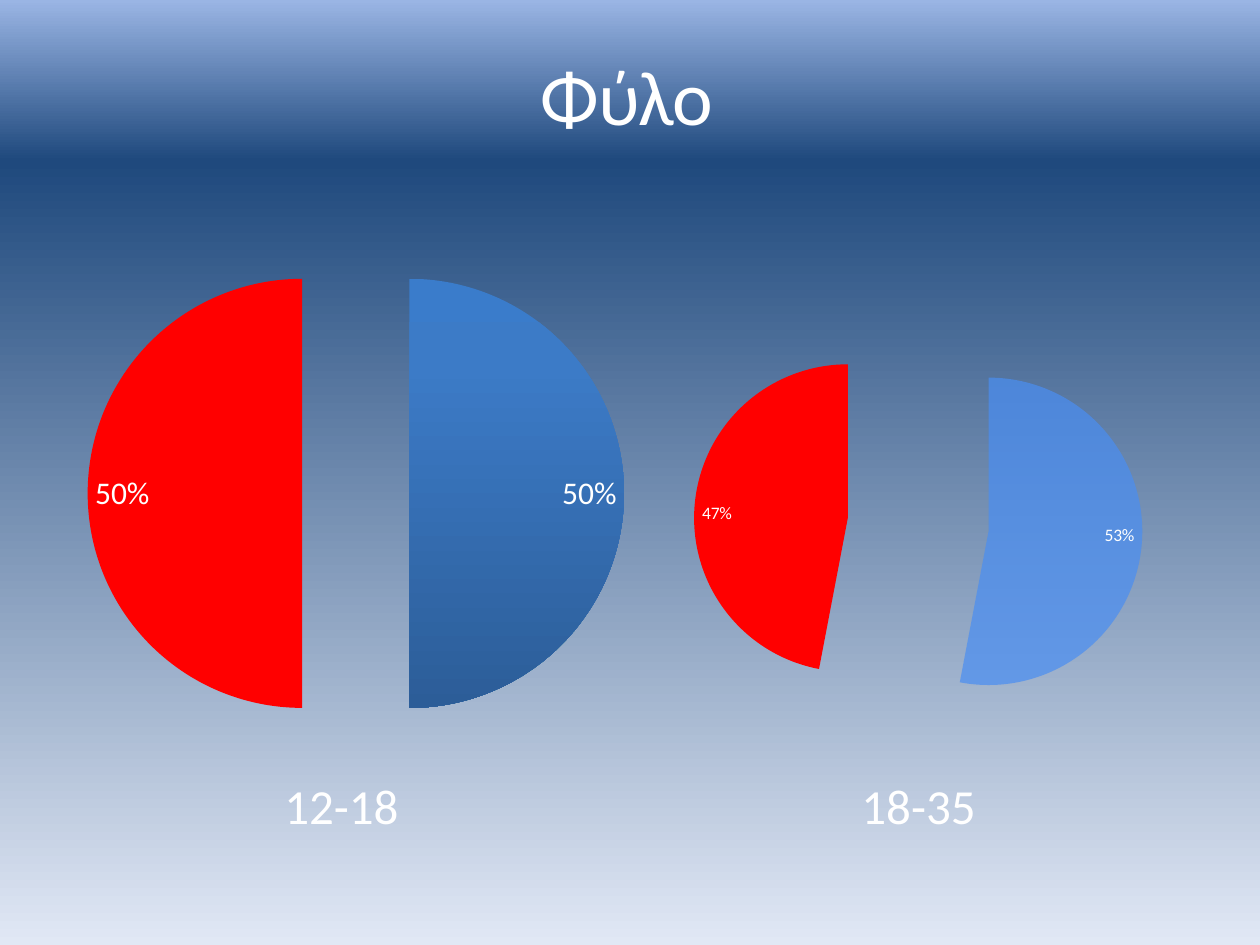
from copy import deepcopy
from dataclasses import dataclass

from lxml import etree
from pptx import Presentation
from pptx import util as u
from pptx.chart.data import CategoryChartData
from pptx.dml.color import RGBColor
from pptx.enum import chart as ch, text
from pptx.oxml.ns import qn


@dataclass(frozen=True)
class Theme:
    font: str = "Calibri"
    white: str = "FFFFFF"
    red: str = "FF0000"
    sky: str = "4A8EF2"
    backdrop: tuple = ((0, "9AB5E4"), (17, "1F497D"), (100, "E1E8F5"))
    blue: tuple = ((0, "3A7CCB"), (20, "3C7BC7"), (100, "2C5D98"))
    title: int = 44
    caption: int = 28
    label: int = 18
    small_label: int = 10


THEME = Theme()
WIDTH, HEIGHT = 10, 7.5


def style_font(font, size):
    font.name, font.size = THEME.font, u.Pt(size)
    font.color.rgb = RGBColor.from_string(THEME.white)


def fill_gradient(fill, root, stops):
    """Fill from top to bottom; root is the element that holds this one gradient."""
    fill.gradient()
    fill.gradient_angle = 270
    gs_list = next(root.iter(qn("a:gsLst")))
    gs_list.append(deepcopy(gs_list[0]))
    for stop, (position, color) in zip(fill.gradient_stops, stops):
        stop.position = position / 100
        stop.color.rgb = RGBColor.from_string(color)


def fill_solid(fill, color, opacity=100):
    fill.solid()
    fill.fore_color.rgb = RGBColor.from_string(color)
    if opacity < 100:
        clr = fill._xPr.find(".//" + qn("a:srgbClr"))
        etree.SubElement(clr, qn("a:alpha")).set("val", str(opacity * 1000))


def add_text(s, box, words, size, anchor):
    tf = s.shapes.add_textbox(*map(u.Inches, box)).text_frame
    tf.word_wrap = True
    tf.vertical_anchor = anchor
    tf.text = words
    p = tf.paragraphs[0]
    p.alignment = text.PP_ALIGN.CENTER
    style_font(p.runs[0].font, size)


def set_plot_layout(chart, shares):
    """Place the inner plot area by left, top, width and height shares of the chart."""
    area = chart._chartSpace.find(".//" + qn("c:plotArea"))
    layout = area.find(qn("c:layout"))
    if layout is None:
        layout = etree.Element(qn("c:layout"))
        area.insert(0, layout)
    manual = etree.SubElement(layout, qn("c:manualLayout"))
    settings = [("layoutTarget", "inner"), ("xMode", "edge"), ("yMode", "edge")]
    for tag, value in settings + list(zip("xywh", shares)):
        etree.SubElement(manual, qn("c:" + tag)).set("val", str(value))


def add_pie(s, box, categories, values, explosion, size, layout):
    data = CategoryChartData()
    data.categories = categories
    data.add_series("Series 1", values)
    frame = s.shapes.add_chart(ch.XL_CHART_TYPE.PIE, *map(u.Inches, box), data)
    chart = frame.chart
    chart.has_legend = chart.has_title = False
    style_font(chart.font, size)
    set_plot_layout(chart, layout)
    plot = chart.plots[0]
    plot.vary_by_categories = True
    plot.has_data_labels = True
    labels = plot.data_labels
    labels.show_percentage, labels.show_value = True, False
    labels.number_format, labels.number_format_is_linked = "0%", False
    labels.position = ch.XL_LABEL_POSITION.INSIDE_END
    style_font(labels.font, size)
    series = plot.series[0]
    series.format.line.fill.background()
    explode = etree.Element(qn("c:explosion"))
    explode.set("val", str(explosion))
    series._element.find(qn("c:spPr")).addnext(explode)
    men, women = (series.points[i].format for i in range(2))
    fill_solid(women.fill, THEME.red)
    for part in (men, women):
        part.line.fill.background()
    for point in series._element.findall(qn("c:dPt")):
        point.find(qn("c:spPr")).addprevious(deepcopy(explode))
    return chart, men


def add_younger_pie(s, box):
    chart, men = add_pie(s, box, ("ΑΝΤΡΕΣ", "ΓΥΝΑΙΚΕΣ"), (50, 50), 25,
                         THEME.label, (0.03, 0.11, 0.94, 0.85))
    fill_gradient(men.fill, chart._chartSpace, THEME.blue)


def add_older_pie(s, box):
    _, men = add_pie(s, box, ("1", "2"), (53, 47), 46,
                     THEME.small_label, (0.13, 0.15, 0.79, 0.75))
    fill_solid(men.fill, THEME.sky, opacity=71)


def add_captions(s, box, captions):
    left, top, width, height = box
    gap = 0.16
    column = (width - gap) / len(captions)
    for i, words in enumerate(captions):
        add_text(s, (left + i * (column + gap), top, column, height), words,
                 THEME.caption, text.MSO_ANCHOR.BOTTOM)


def main():
    prs = Presentation()
    prs.slide_width, prs.slide_height = u.Inches(WIDTH), u.Inches(HEIGHT)
    s = prs.slides.add_slide(prs.slide_layouts[6])
    fill_gradient(s.background.fill, s._element, THEME.backdrop)
    add_text(s, (0.85, 0.25, 8.25, 1), "Φύλο", THEME.title, text.MSO_ANCHOR.MIDDLE)
    add_captions(s, (0.5, 1.75, WIDTH - 1, 4.92), ("12-18", "18-35"))
    add_older_pie(s, (4.92, 1.22, 4.51, 5.61))
    add_younger_pie(s, (0.56, 1.22, 4.53, 5.04))
    prs.save("out.pptx")


if __name__ == "__main__":
    main()
